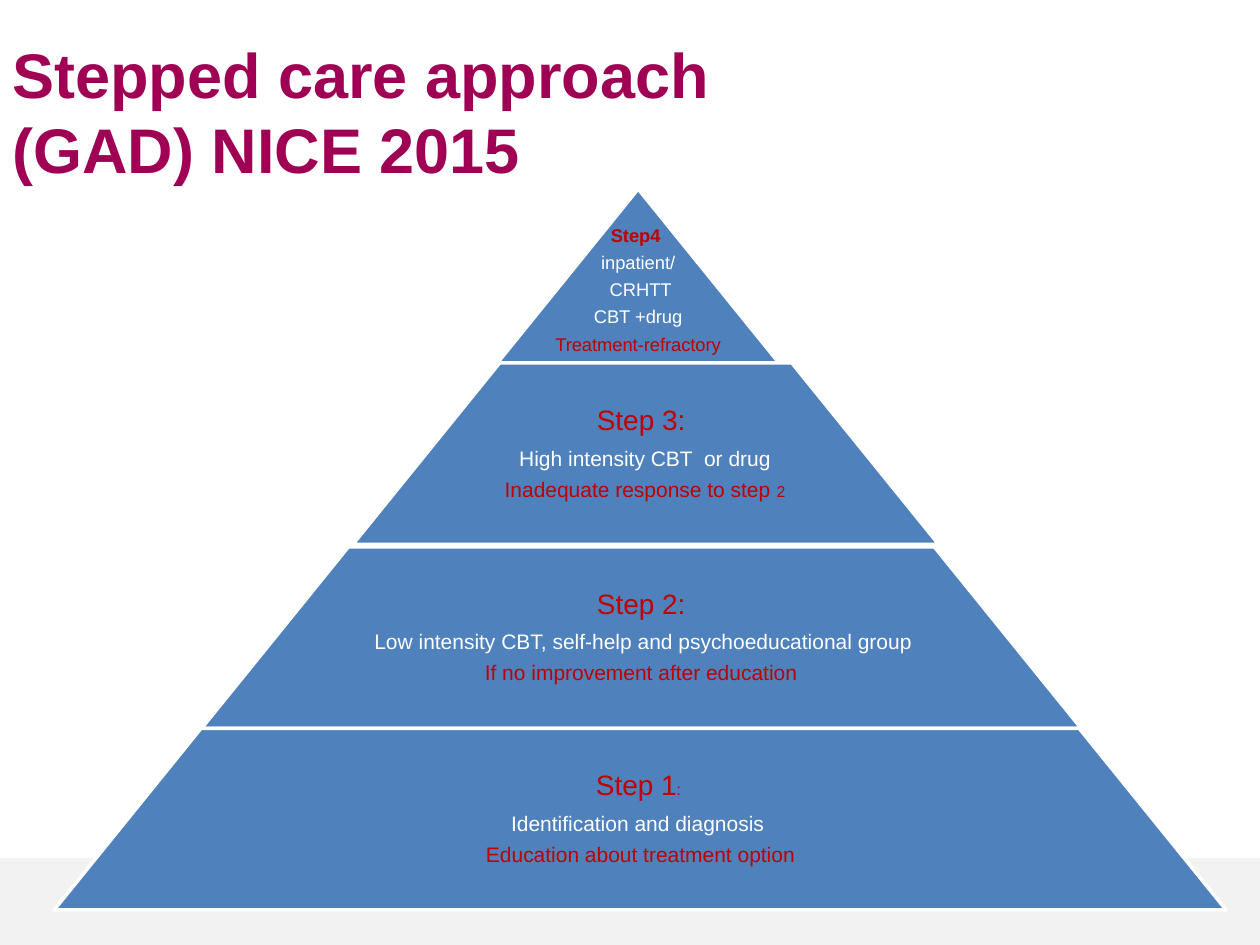
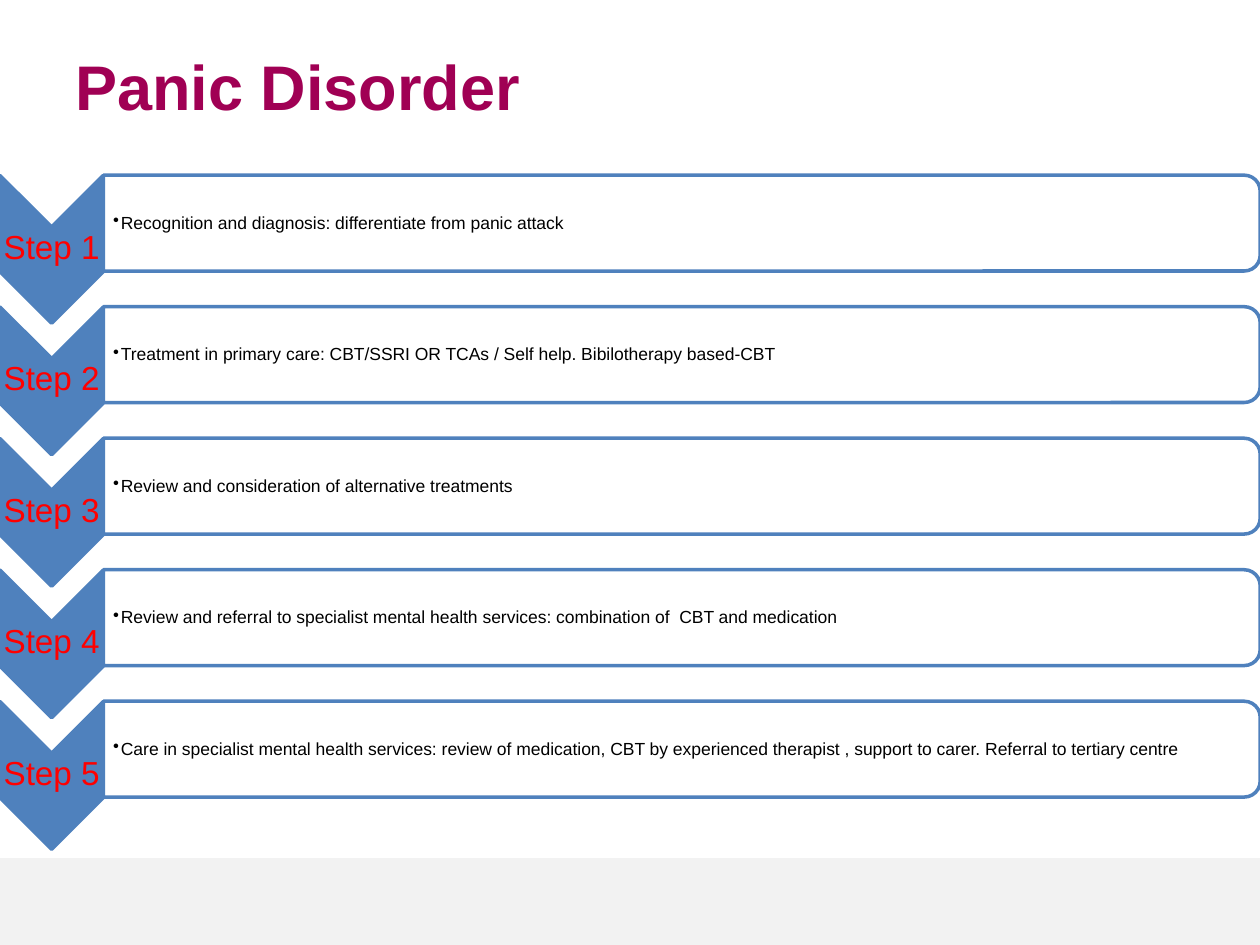
from pptx import Presentation
from pptx.dml.color import RGBColor
from pptx.enum.shapes import MSO_SHAPE
from pptx.enum.text import MSO_ANCHOR, PP_ALIGN
from pptx.oxml.ns import qn
from pptx.util import Pt
from lxml import etree

PLUM = RGBColor(0xA0, 0x00, 0x54)
BLUE = RGBColor(0x4F, 0x81, 0xBD)
DARK_RED = RGBColor(0xC0, 0x00, 0x00)
RED = RGBColor(0xFF, 0x00, 0x00)
WHITE = RGBColor(0xFF, 0xFF, 0xFF)
BLACK = RGBColor(0x00, 0x00, 0x00)
GREY = RGBColor(0xF2, 0xF2, 0xF2)
FONT = "Arial"
W, H = 720, 540


def add_shape(s, kind, box, fill, line=None):
    sp = s.shapes.add_shape(kind, *[Pt(v) for v in box])
    sp.shadow.inherit = False
    sp.fill.solid()
    sp.fill.fore_color.rgb = fill
    if line is None:
        sp.line.fill.background()
    else:
        sp.line.color.rgb = line
        sp.line.width = Pt(2)
    return sp


def add_text(s, box, paras, insets, align=PP_ALIGN.CENTER, anchor=MSO_ANCHOR.MIDDLE,
             spacing=0.9, after=0.4):
    """Each paragraph is a list of runs: (text, size, colour, bold)."""
    tf = s.shapes.add_textbox(*[Pt(v) for v in box]).text_frame
    tf.word_wrap = True
    tf.vertical_anchor = anchor
    tf.margin_left, tf.margin_top, tf.margin_right, tf.margin_bottom = [Pt(v) for v in insets]
    for i, runs in enumerate(paras):
        p = tf.add_paragraph() if i else tf.paragraphs[0]
        p.alignment = align
        p.line_spacing = spacing
        p.space_after = Pt(round(after * max(run[1] for run in runs), 1))
        for text, size, color, bold in runs:
            r = p.add_run()
            r.text = text
            r.font.name, r.font.size, r.font.bold = FONT, Pt(size), bold
            r.font.color.rgb = color
    return tf


prs = Presentation()
prs.slide_width, prs.slide_height = Pt(W), Pt(H)

# Footer band and title on both slides
titles = [
    ((0, 15.1, 426.2, 90.7), ["Stepped care approach ", "(GAD) NICE 2015"]),
    ((36, 21.6, 432, 90), ["Panic Disorder"]),
]
for box, lines in titles:
    s = prs.slides.add_slide(prs.slide_layouts[6])
    add_shape(s, MSO_SHAPE.RECTANGLE, (0, 490.3, W, H - 490.3), GREY)
    add_text(s, box, [[(line, 36, PLUM, True)] for line in lines], (7.2, 5.6, 7.2, 3.6),
             PP_ALIGN.LEFT, MSO_ANCHOR.TOP, Pt(42.9), 0)
pyramid, panic = prs.slides

# Pyramid tiers: left, top, width, text left, text width, top inset, paragraphs
TIER_H = 103.7
tiers = [
    (280.8, 108, 167.8, 280.8, 167.8, 13.6, [
        [("Step4 ", 10.5, DARK_RED, True)],
        [("inpatient/", 10.5, WHITE, False)],
        [(" CRHTT", 10.5, WHITE, False)],
        [("CBT +drug", 10.5, WHITE, False)],
        [("Treatment-refractory", 10.5, DARK_RED, False)]]),
    (201.6, 207.4, 334.8, 259.9, 217.4, 1.4, [
        [("Step 3: ", 16, DARK_RED, False)],
        [("High intensity CBT  or drug", 12, WHITE, False)],
        [("Inadequate response to step ", 12, DARK_RED, False), ("2", 9, DARK_RED, False)]]),
    (115.2, 312.5, 502.6, 203, 326.9, 1.4, [
        [("Step 2:", 16, DARK_RED, False)],
        [(" ", 9, WHITE, False),
         ("Low intensity CBT, self-help and psychoeducational group", 12, WHITE, False)],
        [("If no improvement after education", 12, DARK_RED, False)]]),
    (31, 416.2, 669.6, 148.3, 435.6, 1.4, [
        [("Step 1", 16, DARK_RED, False), (": ", 9, DARK_RED, False)],
        [("Identification and diagnosis ", 12, WHITE, False)],
        [("Education about treatment option", 12, DARK_RED, False)]]),
]
for left, top, width, text_left, text_width, inset, paras in tiers:
    sp = add_shape(pyramid, MSO_SHAPE.TRAPEZOID, (left, top, width, TIER_H), BLUE, WHITE)
    sp.adjustments[0] = 0.809
    add_text(pyramid, (text_left, top, text_width, TIER_H), paras, (1, inset, 1, 1))

# Panic disorder steps: chevron with its label, bar with its bullet
STEP_GAP = 75.15
steps = [
    "Recognition and diagnosis: differentiate from panic attack",
    "Treatment in primary care: CBT/SSRI OR TCAs / Self help. Bibilotherapy based-CBT",
    "Review and consideration of alternative treatments",
    "Review and referral to specialist mental health services: combination of  CBT and medication",
    "Care in specialist mental health services: review of medication, CBT by experienced therapist"
    " , support to carer. Referral to tertiary centre",
]
for i, step in enumerate(steps):
    y = i * STEP_GAP
    sp = add_shape(panic, MSO_SHAPE.CHEVRON, (-12.7, 113, 84.4, 59), BLUE, BLUE)
    sp.top, sp.rotation = Pt(113 + y), 90
    add_text(panic, (0, 129.3 + y, 59, 25.2), [[(f"Step {i + 1}", 19, RED, False)]],
             (0.7, 0.7, 0.7, 0.7))

    sp = add_shape(panic, MSO_SHAPE.ROUND_2_SAME_RECTANGLE, (362.2, y - 203, 54.8, 661), WHITE, BLUE)
    sp.rotation = 90
    clr = sp.fill._xPr.find(qn("a:solidFill"))[0]
    etree.SubElement(clr, qn("a:alpha")).set("val", "90000")

    tf = add_text(panic, (59, 102.8 + y, 658, 49.7), [[(step, 10, BLACK, False)]],
                  (5.6, 0.7, 0.7, 0.7), PP_ALIGN.LEFT, after=0.17)
    pPr = tf.paragraphs[0]._p.get_or_add_pPr()
    pPr.set("marL", str(Pt(4.5)))
    pPr.set("indent", str(-Pt(4.5)))
    etree.SubElement(pPr, qn("a:buChar")).set("char", "•")

prs.save("out.pptx")
